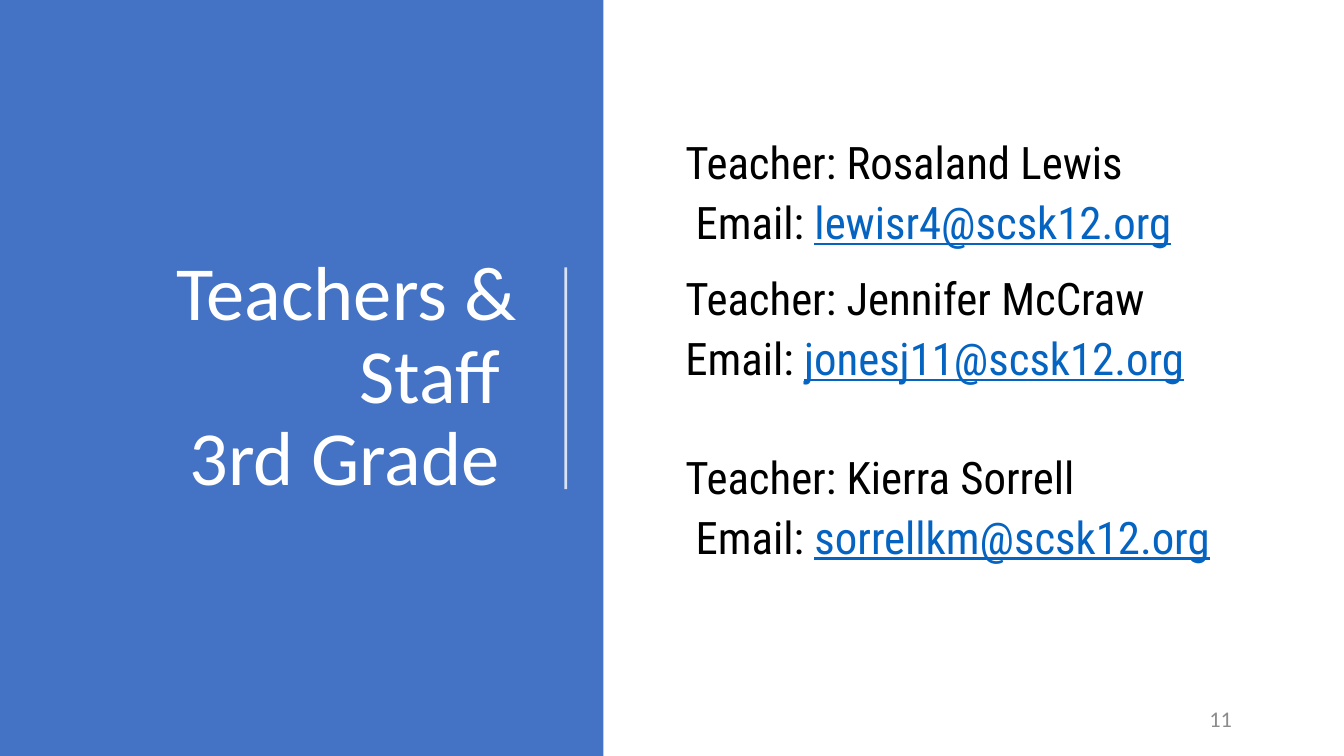
from lxml import etree
from pptx import Presentation
from pptx.dml.color import RGBColor
from pptx.enum.shapes import MSO_CONNECTOR, MSO_SHAPE
from pptx.enum.text import MSO_ANCHOR, MSO_AUTO_SIZE, PP_ALIGN
from pptx.oxml.ns import qn
from pptx.util import Inches, Pt

BLUE = RGBColor(0x44, 0x72, 0xC4)
LINK = RGBColor(0x05, 0x63, 0xC1)
BLACK = RGBColor(0, 0, 0)
WHITE = RGBColor(0xFF, 0xFF, 0xFF)
GRAY = RGBColor(0x8C, 0x8C, 0x8C)
HEAD_FONT, BODY_FONT = "Calibri", "Roboto Condensed"
STRAIGHT, RECT = MSO_CONNECTOR.STRAIGHT, MSO_SHAPE.RECTANGLE
TOP, MIDDLE = MSO_ANCHOR.TOP, MSO_ANCHOR.MIDDLE
LEFT, RIGHT = PP_ALIGN.LEFT, PP_ALIGN.RIGHT
NO_AUTOFIT = MSO_AUTO_SIZE.NONE


def add_run(p, text, size=24, font=BODY_FONT, color=BLACK, underline=False):
    r = p.add_run()
    r.text = text
    r.font.size, r.font.name = Pt(size), font
    r.font.color.rgb = color
    r.font.underline = underline


def set_up(sp, box, anchor=TOP, align=LEFT, after=6):
    """Place a text shape and return its formatted first paragraph."""
    sp.left, sp.top, sp.width, sp.height = (Inches(v) for v in box)
    tf = sp.text_frame
    tf.word_wrap, tf.auto_size, tf.vertical_anchor = True, NO_AUTOFIT, anchor
    p = tf.paragraphs[0]
    p.alignment, p.line_spacing = align, 0.9
    p.space_before, p.space_after = Pt(0), Pt(after)
    return p


prs = Presentation()
prs.slide_width = Inches(10)
prs.slide_height = prs.slide_width * 9 // 16
s = prs.slides.add_slide(prs.slide_layouts[3])
title, upper, lower = s.placeholders

# Blue panel behind the title, with a divider
panel = s.shapes.add_shape(RECT, 0, 0, Inches(4.49), prs.slide_height)
panel.shadow.inherit = False
panel.fill.solid()
panel.fill.fore_color.rgb = BLUE
panel.line.fill.background()
s.shapes.element.insert(2, panel.element)

divider = s.shapes.add_connector(
    STRAIGHT, Inches(4.21), Inches(1.99), Inches(4.21), Inches(3.64))
divider.line.color.rgb = WHITE
divider.line.width = Pt(1.5)
sp_pr = divider.element.spPr
etree.SubElement(sp_pr, qn("a:effectLst"))
color = sp_pr.find(".//" + qn("a:srgbClr"))
etree.SubElement(color, qn("a:alpha"), val="80000")

# Title
p = set_up(title, (0.53, 0.53, 3.42, 4.57), MIDDLE, RIGHT, after=0)
add_run(p, "Teachers & Staff ", 41, HEAD_FONT, WHITE)
p.add_line_break()
add_run(p, "3rd Grade ", 41, HEAD_FONT, WHITE)

# Teacher lists: name, e-mail label, address, space before in points
lists = [
    (upper, (5, 0.51, 4.47, 1.42), 0.54, [
        ("Rosaland Lewis", " Email: ", "lewisr4@scsk12.org", 0)]),
    (lower, (5, 2.01, 4.47, 3.06), 0.05, [
        ("Jennifer McCraw", "Email: ", "jonesj11@scsk12.org", 0),
        ("Kierra Sorrell", " Email: ", "sorrellkm@scsk12.org", 32)]),
]
for sp, box, inset, teachers in lists:
    p = set_up(sp, box)
    tf = sp.text_frame
    tf.margin_top = Inches(inset)
    for i, (name, label, address, before) in enumerate(teachers):
        if i:
            p = tf.add_paragraph()
        add_run(p, "Teacher: " + name)
        p.space_before = Pt(before)
        p = tf.add_paragraph()
        p.space_before = Pt(0)
        add_run(p, label)
        add_run(p, address, color=LINK, underline=True)
        add_run(p, " ")
    for p in tf.paragraphs:
        p.alignment, p.line_spacing, p.space_after = LEFT, 0.9, Pt(6)
        p_pr = p._p.get_or_add_pPr()
        p_pr.set("marL", "0")
        p_pr.set("indent", "0")
        etree.SubElement(p_pr, qn("a:buNone"))

# Slide number
number = s.shapes.add_textbox(0, 0, 0, 0)
p = set_up(number, (8.9, 5.21, 0.57, 0.3), MIDDLE)
add_run(p, "11", 12, HEAD_FONT, GRAY)

prs.save("out.pptx")
